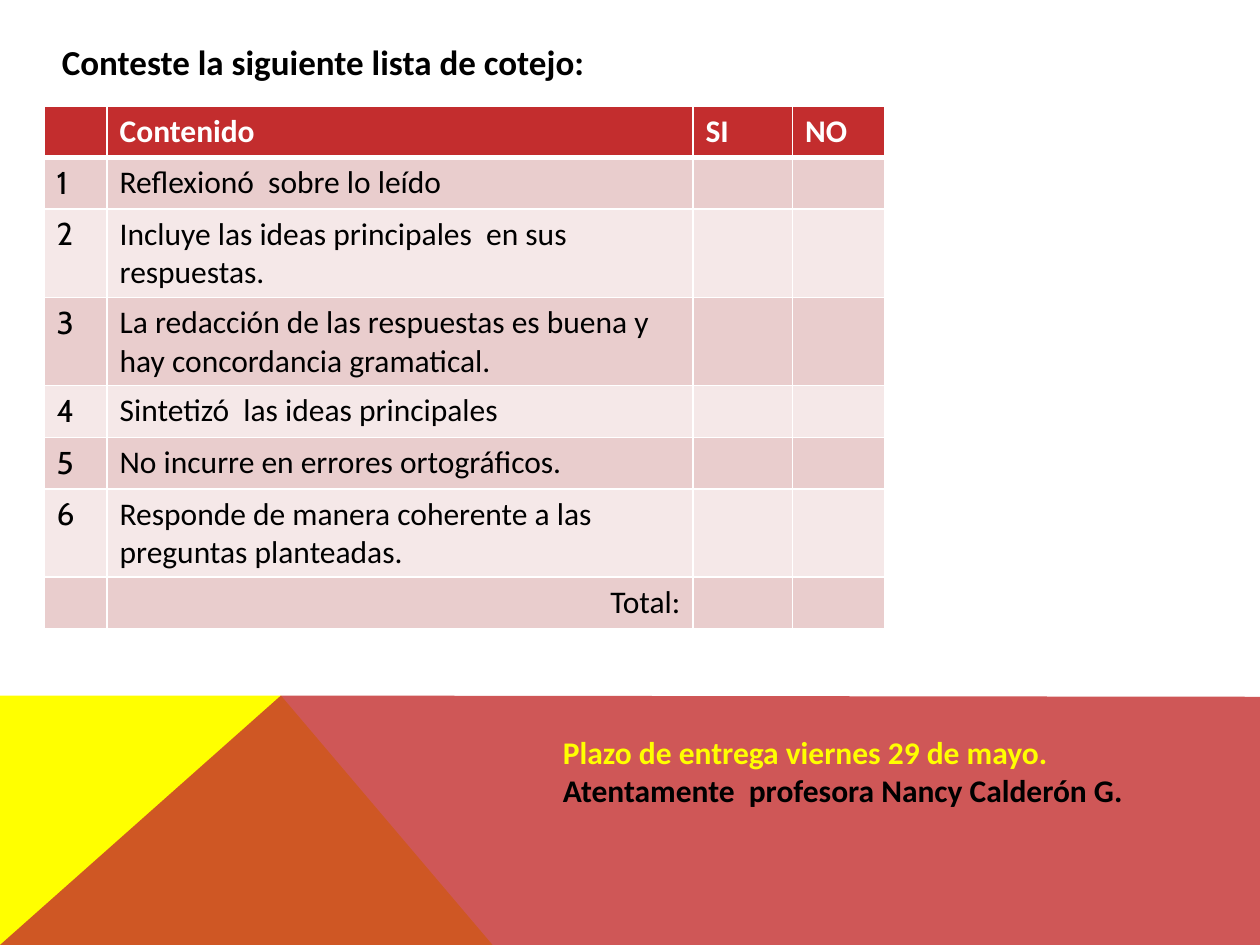
from dataclasses import dataclass

from lxml.etree import SubElement
from pptx import Presentation
from pptx.dml.color import RGBColor
from pptx.enum.text import MSO_ANCHOR as Anchor, MSO_AUTO_SIZE as AutoSize, PP_ALIGN as Align
from pptx.oxml.ns import qn
from pptx.util import Inches, Pt


@dataclass(frozen=True)
class Theme:
    red: str = "C32D2E"
    yellow: str = "FFFF00"
    black: str = "000000"
    white: str = "FFFFFF"
    bands: tuple = ("E9CDCD", "F5E8E8")
    font: str = "Calibri"
    number_font: str = "Cabin"
    heading_size: int = 20
    body_size: int = 18
    rule: int = 1
    header_rule: int = 3


THEME = Theme()
COLUMNS = (0.5, 4.65, 0.79, 0.73)
HEADER = ("", "Contenido", "SI", "NO")
CRITERIA = (
    "Reflexionó  sobre lo leído",
    "Incluye las ideas principales  en sus respuestas.",
    "La redacción de las respuestas es buena y hay concordancia gramatical.",
    "Sintetizó  las ideas principales",
    "No incurre en errores ortográficos.",
    "Responde de manera coherente a las preguntas planteadas.",
)


def add_span(para, text, color, size=THEME.body_size, font=THEME.font, bold=False):
    span = para.add_run()
    span.text = text
    span.font.name, span.font.size, span.font.bold = font, Pt(size), bold
    span.font.color.rgb = RGBColor.from_string(color)


def add_polygon(page, box, points, color, opacity=100):
    """Draw a filled outline whose points are offsets from the box corner."""
    left, top = box[:2]
    corners = [(Inches(left + x), Inches(top + y)) for x, y in points]
    builder = page.shapes.build_freeform(*corners[0], scale=1.0)
    builder.add_line_segments(corners[1:], close=True)
    shape = builder.convert_to_shape()
    shape.shadow.inherit = False
    shape.line.fill.background()
    shape.fill.solid()
    shape.fill.fore_color.rgb = RGBColor.from_string(color)
    if opacity < 100:
        fill_color = shape.fill._xPr.find(qn("a:solidFill"))[0]
        SubElement(fill_color, qn("a:alpha"), val=str(opacity * 1000))


def add_footer_band(page, box):
    width, height = box[2:]
    peak, foot = 2.23, 3.91
    add_polygon(page, box, [(0, height), (0, 0), (peak, 0), (foot, height)], THEME.yellow)
    add_polygon(page, box, [(0, height), (peak, 0), (width, 0.01), (width, height)],
                THEME.red, opacity=80)


def add_heading(page, box, text):
    title = page.shapes.title
    title.left, title.top, title.width, title.height = map(Inches, box)
    frame = title.text_frame
    frame.word_wrap = False
    frame.auto_size = AutoSize.SHAPE_TO_FIT_TEXT
    frame.vertical_anchor = Anchor.TOP
    para = frame.paragraphs[0]
    para.alignment = Align.LEFT
    add_span(para, text, THEME.black, THEME.heading_size, bold=True)


def set_borders(cell, top, bottom):
    properties = cell._tc.get_or_add_tcPr()
    for side, points in (("L", THEME.rule), ("R", THEME.rule), ("T", top), ("B", bottom)):
        line = SubElement(properties, qn(f"a:ln{side}"), w=str(Pt(points)))
        SubElement(SubElement(line, qn("a:solidFill")), qn("a:srgbClr"), val=THEME.white)


def add_checklist(page, box):
    rows = [HEADER]
    rows += [(str(number), text, "", "") for number, text in enumerate(CRITERIA, 1)]
    rows.append(("", "Total:", "", ""))
    table = page.shapes.add_table(len(rows), len(COLUMNS), *map(Inches, box)).table
    table.horz_banding = False
    for column, width in zip(table.columns, COLUMNS):
        column.width = Inches(width)
    for r, texts in enumerate(rows):
        table.rows[r].height = Inches(0.41)
        is_header = r == 0
        fill = THEME.red if is_header else THEME.bands[(r - 1) % 2]
        for c, text in enumerate(texts):
            cell = table.cell(r, c)
            set_borders(cell, THEME.header_rule if r == 1 else THEME.rule,
                        THEME.header_rule if is_header else THEME.rule)
            cell.fill.solid()
            cell.fill.fore_color.rgb = RGBColor.from_string(fill)
            if text:
                add_span(cell.text_frame.paragraphs[0], text,
                         THEME.white if is_header else THEME.black,
                         font=THEME.font if c else THEME.number_font, bold=is_header)
    table.cell(len(rows) - 1, 1).text_frame.paragraphs[0].alignment = Align.RIGHT


def add_deadline(page, box):
    frame = page.shapes.add_textbox(*map(Inches, box)).text_frame
    frame.word_wrap = True
    frame.auto_size = AutoSize.SHAPE_TO_FIT_TEXT
    para = frame.paragraphs[0]
    add_span(para, "Plazo de entrega viernes 29 de mayo.", THEME.yellow, bold=True)
    para.add_line_break()
    add_span(para, "Atentamente  profesora Nancy Calderón G.", THEME.black, bold=True)


def main():
    deck = Presentation()
    deck.slide_width, deck.slide_height = Inches(10), Inches(7.5)
    page = deck.slides.add_slide(deck.slide_layouts.get_by_name("Title Only"))
    add_footer_band(page, (0, 5.52, 10, 1.98))
    add_checklist(page, (0.35, 0.84, sum(COLUMNS), 3.28))
    add_heading(page, (0.39, 0.27, 4.71, 0.44), "Conteste la siguiente lista de cotejo:")
    add_deadline(page, (4.37, 5.77, 5, 0.71))
    deck.save("out.pptx")


if __name__ == "__main__":
    main()
